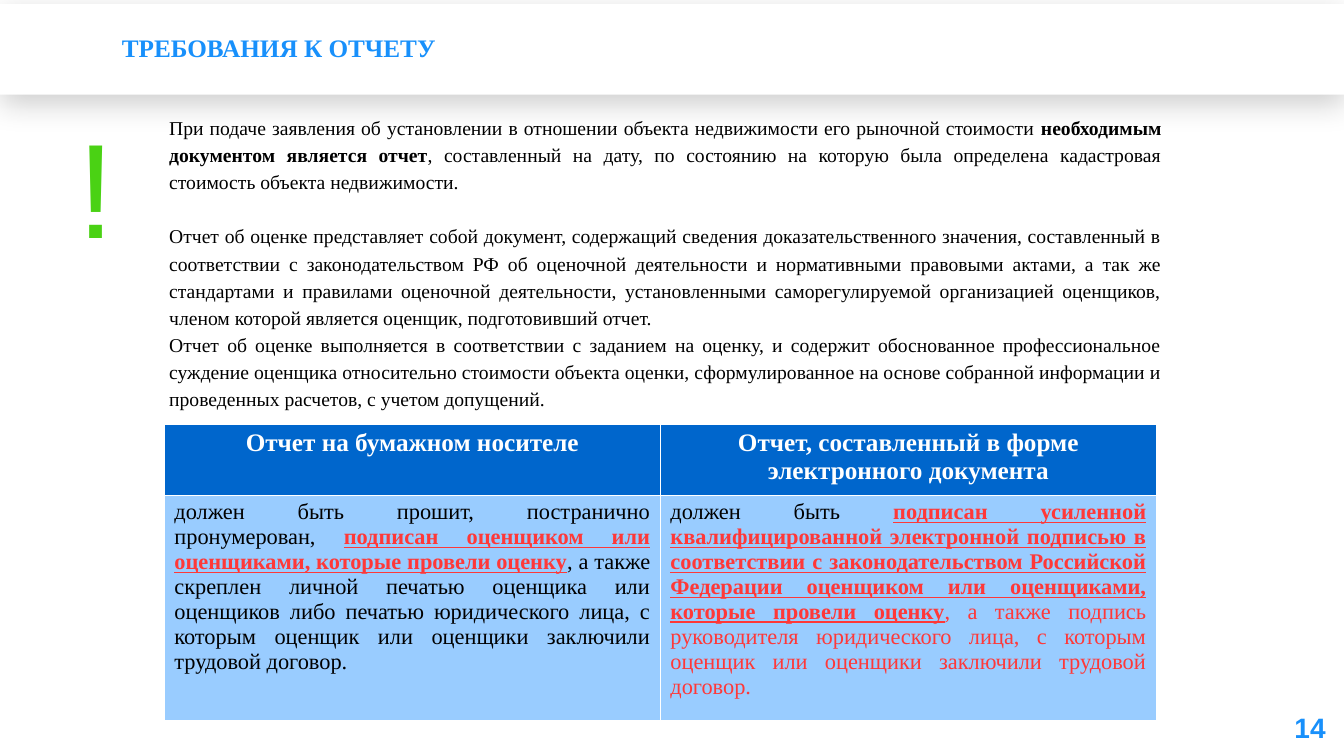
from lxml import etree
from pptx import Presentation
from pptx.dml.color import RGBColor
from pptx.enum.shapes import MSO_SHAPE
from pptx.enum.text import MSO_ANCHOR, PP_ALIGN
from pptx.oxml import parse_xml
from pptx.oxml.ns import nsdecls, qn
from pptx.util import Inches, Pt

RECT = MSO_SHAPE.RECTANGLE
MID, TOP = MSO_ANCHOR.MIDDLE, MSO_ANCHOR.TOP
LEFT, MID_X, JUST = PP_ALIGN.LEFT, PP_ALIGN.CENTER, PP_ALIGN.JUSTIFY

# Content: each run is (text, style)
BLUE, GREEN, RED = "1890FB", "4AD214", "FF3838"
BLACK, WHITE = "000000", "FFFFFF"
SERIF, SANS = "Times New Roman", "Arial"

# Style: font, size, colour, bold, underline
HEAD = (SERIF, 18, BLUE, True, False)
BODY = (SERIF, 14, BLACK, False, False)
BOLD = (SERIF, 14, BLACK, True, False)
COL = (SERIF, 18, WHITE, True, False)
CELL = (SERIF, 16, BLACK, False, False)
KEY = (SERIF, 16, RED, True, True)
NOTE = (SERIF, 16, RED, False, False)
MARK = (SANS, 96, GREEN, False, False)
PAGE = (SANS, 20, BLUE, True, False)

TITLE = [("ТРЕБОВАНИЯ К ОТЧЕТУ", HEAD)]
PARAS = [
    [("При подаче заявления об установлении в отношении объекта недвижимости "
      "его рыночной стоимости ", BODY),
     ("необходимым документом является отчет", BOLD),
     (", составленный на дату, по состоянию на которую была определена "
      "кадастровая стоимость объекта недвижимости.", BODY)],
    [("Отчет об оценке представляет собой документ, содержащий сведения "
      "доказательственного значения, составленный в соответствии с "
      "законодательством РФ об оценочной деятельности и нормативными правовыми "
      "актами, а так же стандартами и правилами оценочной деятельности, "
      "установленными саморегулируемой организацией оценщиков, членом которой "
      "является оценщик, подготовивший отчет.", BODY)],
    [("Отчет об оценке выполняется в соответствии с заданием на оценку, и "
      "содержит обоснованное профессиональное суждение оценщика относительно "
      "стоимости объекта оценки, сформулированное на основе собранной "
      "информации и проведенных расчетов, с учетом допущений.", BODY)],
]
# Table rows: height, fill, alignment, cells
ROWS = [
    (0.7, "0066CC", MID_X, [
        [("Отчет на бумажном носителе", COL)],
        [("Отчет, составленный в форме электронного документа", COL)]]),
    (2.23, "99CCFF", JUST, [
        [("должен быть прошит, постранично пронумерован, ", CELL),
         ("подписан оценщиком или оценщиками, которые провели оценку", KEY),
         (", а также скреплен личной печатью оценщика или оценщиков либо "
          "печатью юридического лица, с которым оценщик или оценщики "
          "заключили трудовой договор.", CELL)],
        [("должен быть ", CELL),
         ("подписан усиленной квалифицированной электронной подписью в "
          "соответствии с законодательством Российской Федерации оценщиком "
          "или оценщиками, которые провели оценку", KEY),
         (", а также подпись руководителя юридического лица, с которым "
          "оценщик или оценщики заключили трудовой договор.", NOTE)]]),
]
COL_W = 4.92


def rgb(code):
    return RGBColor.from_string(code)


def write(frame, paras, align=LEFT, line=None, gaps=()):
    frame.word_wrap = True
    for i, runs in enumerate(paras):
        par = frame.paragraphs[0] if i == 0 else frame.add_paragraph()
        par.alignment = align
        if line:
            par.line_spacing = line
        if i in gaps:
            par.space_before = Pt(19.3)
        for text, (name, size, tint, bold, under) in runs:
            run = par.add_run()
            run.text = text
            font = run.font
            font.name, font.size = name, Pt(size)
            font.bold, font.underline = bold, under
            font.color.rgb = rgb(tint)


def label(box, paras, **style):
    shape = slide.shapes.add_textbox(*map(Inches, box))
    write(shape.text_frame, paras, **style)


def edge(cell):
    props = cell._tc.get_or_add_tcPr()
    for i, side in enumerate(("lnL", "lnR", "lnT", "lnB")):
        props.insert(i, parse_xml(
            f'<a:{side} {nsdecls("a")} w="762"><a:solidFill>'
            f'<a:srgbClr val="{WHITE}"/></a:solidFill></a:{side}>'))


def shade(shape, blur, dist, alpha):
    fx = etree.SubElement(shape._element.spPr, qn("a:effectLst"))
    out = etree.SubElement(fx, qn("a:outerShdw"), blurRad=str(Pt(blur)),
                           dist=str(Pt(dist)), dir="5400000", algn="t",
                           rotWithShape="0")
    tint = etree.SubElement(out, qn("a:srgbClr"), val=BLACK)
    etree.SubElement(tint, qn("a:alpha"), val=str(alpha * 1000))


deck = Presentation()
deck.slide_width, deck.slide_height = Inches(13.33), Inches(7.5)
slide = deck.slides.add_slide(deck.slide_layouts[6])

# Title bar with a soft shadow
bar = slide.shapes.add_shape(RECT, 0, Inches(0.04), Inches(13.33), Inches(0.9))
bar.fill.solid()
bar.fill.fore_color.rgb = rgb(WHITE)
bar.line.fill.background()
shade(bar, 22, 6, 20)
bar.text_frame.margin_left = Inches(1.21)
bar.text_frame.vertical_anchor = MID
write(bar.text_frame, [TITLE], line=0.9)

# Body text and page number
label((1.58, 1.07, 10.04, 3.06), PARAS, align=JUST, line=1.15, gaps=(1,))
label((12.74, 7, 0.59, 0.43), [[("14", PAGE)]])

# Table
grid = slide.shapes.add_table(
    len(ROWS), 2, Inches(1.63), Inches(4.21), Inches(2 * COL_W),
    Inches(sum(row[0] for row in ROWS))).table
for col in grid.columns:
    col.width = Inches(COL_W)
for r, (high, fill, align, cells) in enumerate(ROWS):
    grid.rows[r].height = Inches(high)
    for c, runs in enumerate(cells):
        cell = grid.cell(r, c)
        cell.fill.solid()
        cell.fill.fore_color.rgb = rgb(fill)
        cell.vertical_anchor = TOP
        edge(cell)
        write(cell.text_frame, [runs], align=align)

# Exclamation mark
label((0.67, 0.98, 0.39, 1.58), [[("!", MARK)]])
deck.save("out.pptx")
